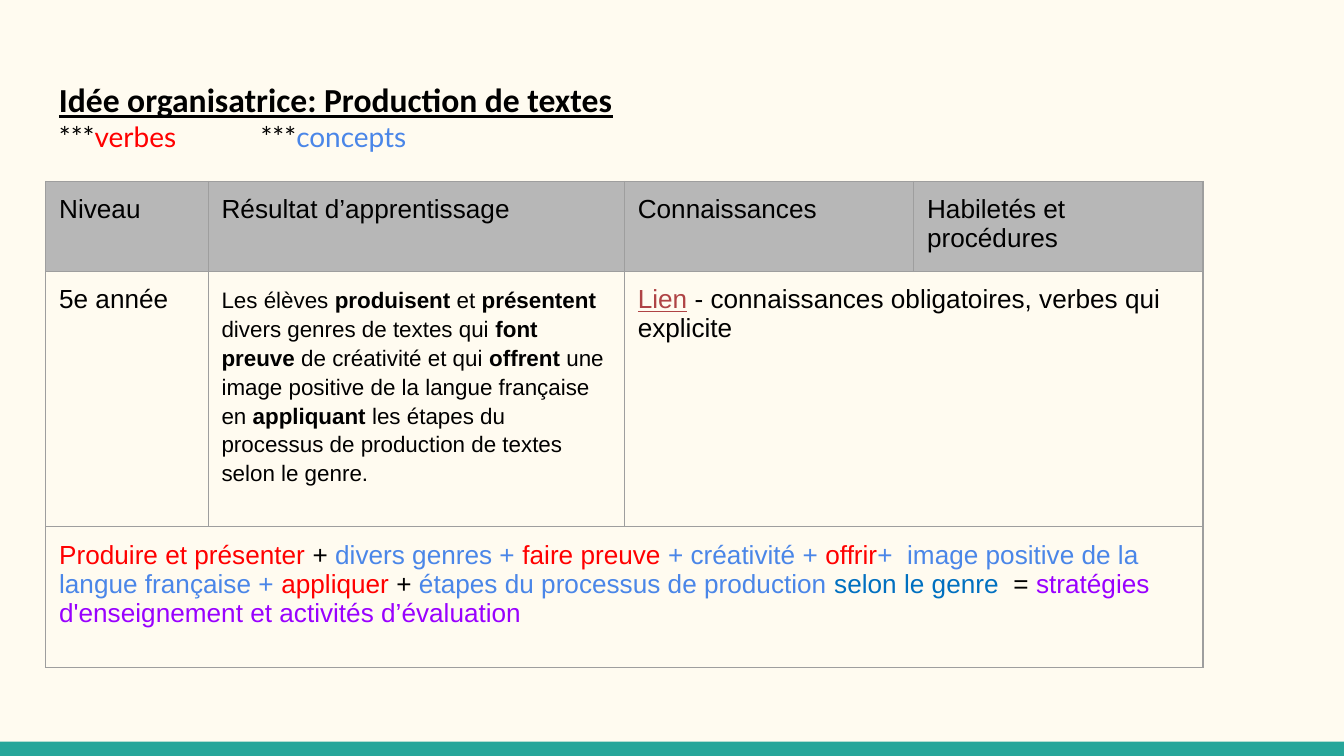
from lxml import etree
from pptx import Presentation
from pptx import util as u
from pptx.dml.color import RGBColor
from pptx.enum import shapes, text
from pptx.oxml import ns

CREAM = RGBColor(0xFF, 0xFB, 0xF0)
TEAL = RGBColor(0x26, 0xA6, 0x9A)
BLACK = RGBColor(0, 0, 0)
RED = RGBColor(0xFF, 0, 0)
BLUE = RGBColor(0x4A, 0x86, 0xE8)
DEEP_BLUE = RGBColor(0, 0x70, 0xC0)
PURPLE = RGBColor(0x99, 0, 0xFF)
LINK = RGBColor(0xAF, 0x43, 0x45)
HEADER = RGBColor(0xB7, 0xB7, 0xB7)
BORDER = RGBColor(0x9E, 0x9E, 0x9E)

WIDTH, HEIGHT = 720, 405
LEFT = 24.5
PADDING = 7.2

HEADINGS = ["Niveau", "Résultat d’apprentissage", "Connaissances", "Habiletés et procédures"]
# In the outcome, every second piece is bold.
OUTCOME = [
    "Les élèves ", "produisent", " et ", "présentent", " divers genres de textes qui ",
    "font preuve", " de créativité et qui ", "offrent",
    " une image positive de la langue française en ", "appliquant",
    " les étapes du processus de production de textes selon le genre.",
]
SUMMARY = [
    ("Produire et présenter", RED), (" + ", BLACK), ("divers genres + ", BLUE),
    ("faire preuve ", RED), ("+ créativité + ", BLUE), ("offrir", RED),
    ("+  image positive de la langue française + ", BLUE), ("appliquer ", RED),
    ("+", BLACK), (" étapes du processus de production ", BLUE),
    ("selon le genre  ", DEEP_BLUE), ("= ", BLACK),
    ("stratégies d'enseignement et activités d’évaluation", PURPLE),
]


class SlideBuilder:
    def __init__(self, slide, font="Arial", size=14):
        self.slide, self.font, self.size = slide, font, size

    def background(self, color):
        fill = self.slide.background.fill
        fill.solid()
        fill.fore_color.rgb = color

    def bar(self, left, top, width, height, color):
        shape = self.slide.shapes.add_shape(
            shapes.MSO_SHAPE.RECTANGLE, *map(u.Pt, (left, top, width, height)))
        shape.shadow.inherit = False
        shape.fill.solid()
        shape.fill.fore_color.rgb = color
        shape.line.fill.background()

    def text_box(self, left, top, width, height):
        frame = self.slide.shapes.add_textbox(
            *map(u.Pt, (left, top, width, height))).text_frame
        frame.word_wrap = True
        frame.vertical_anchor = text.MSO_ANCHOR.TOP
        self.pad(frame)
        return frame

    def pad(self, item):
        item.margin_left = item.margin_right = u.Pt(PADDING)
        item.margin_top = item.margin_bottom = u.Pt(PADDING)

    def add_text(self, paragraph, pieces, font=None, size=None):
        """Add (text, colour) pieces, with an optional "bold" or "underline" after them."""
        paragraph.font.name = font or self.font
        paragraph.font.size = u.Pt(size or self.size)
        for words, color, *styles in pieces:
            run = paragraph.add_run()
            run.text = words
            run.font.color.rgb = color
            if "bold" in styles:
                run.font.bold = True
            if "underline" in styles:
                run.font.underline = True

    def table(self, left, top, columns, rows):
        table = self.slide.shapes.add_table(
            len(rows), len(columns),
            *map(u.Pt, (left, top, sum(columns), sum(rows)))).table
        table.first_row = table.horz_banding = False
        for column, width in zip(table.columns, columns):
            column.width = u.Pt(width)
        for row, height in zip(table.rows, rows):
            row.height = u.Pt(height)
        for cell in table.iter_cells():
            self.pad(cell)
            self.border(cell)
            cell.fill.background()
        return table

    def border(self, cell):
        properties = cell._tc.get_or_add_tcPr()
        for index, side in enumerate(("lnL", "lnR", "lnT", "lnB")):
            line = etree.Element(ns.qn(f"a:{side}"), w=str(u.Pt(0.75)))
            fill = etree.SubElement(line, ns.qn("a:solidFill"))
            etree.SubElement(fill, ns.qn("a:srgbClr"), val=str(BORDER))
            properties.insert(index, line)


def main():
    presentation = Presentation()
    presentation.slide_width, presentation.slide_height = u.Pt(WIDTH), u.Pt(HEIGHT)
    slide = presentation.slides.add_slide(presentation.slide_layouts[6])
    builder = SlideBuilder(slide)
    builder.background(CREAM)
    builder.bar(0, 397.4, WIDTH, HEIGHT - 397.4, TEAL)

    title = builder.text_box(LEFT, 35.3, 671, 48.2)
    builder.add_text(title.paragraphs[0],
                     [("Idée organisatrice: Production de textes", BLACK, "bold", "underline")],
                     "Calibri", 18)
    builder.add_text(title.add_paragraph(),
                     [("***", BLACK), ("verbes", RED), ("\t\t***", BLACK), ("concepts", BLUE)],
                     "Lato", 15)

    table = builder.table(LEFT, 97.2, [87, 223, 155, 155], [45.5, 137, 75.5])
    table.cell(1, 2).merge(table.cell(1, 3))
    table.cell(2, 0).merge(table.cell(2, 3))

    for column, heading in enumerate(HEADINGS):
        cell = table.cell(0, column)
        cell.fill.solid()
        cell.fill.fore_color.rgb = HEADER
        builder.add_text(cell.text_frame.paragraphs[0], [(heading, BLACK)])

    level, outcome, knowledge, summary = (
        table.cell(*place).text_frame.paragraphs[0]
        for place in ((1, 0), (1, 1), (1, 2), (2, 0)))
    builder.add_text(level, [("5e année", BLACK)])
    outcome.line_spacing = 1.15
    builder.add_text(outcome,
                     [(words, BLACK, "bold") if index % 2 else (words, BLACK)
                      for index, words in enumerate(OUTCOME)], size=12)
    builder.add_text(knowledge,
                     [("Lien", LINK, "underline"),
                      (" - connaissances obligatoires, verbes qui explicite", BLACK)])
    builder.add_text(summary, SUMMARY)

    presentation.save("out.pptx")


if __name__ == "__main__":
    main()
